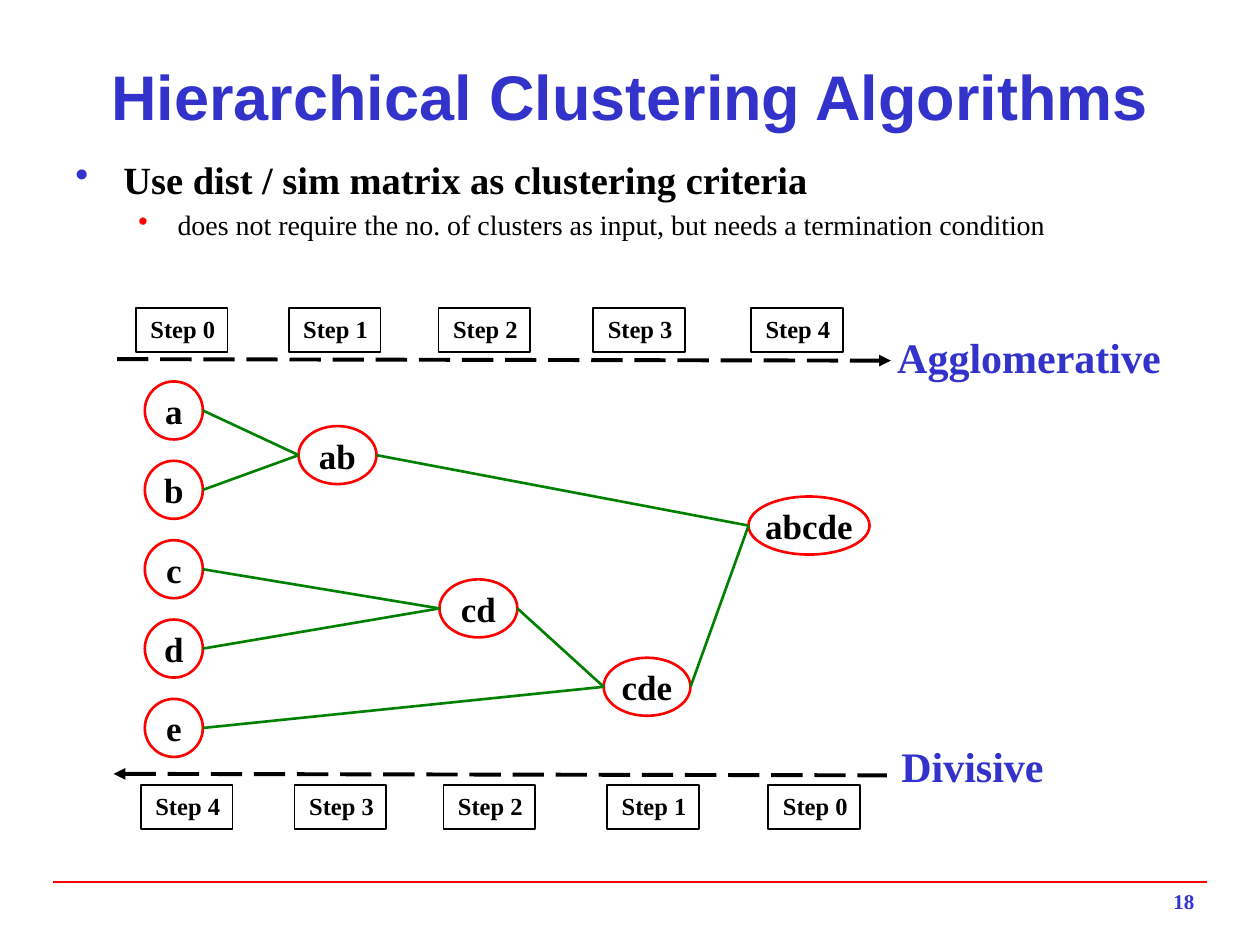
import pptx
import pptx.dml.color
import pptx.enum.dml
import pptx.enum.shapes
import pptx.enum.text
import pptx.oxml
import pptx.oxml.ns
import pptx.util
from lxml import etree

Cm = pptx.util.Cm
Pt = pptx.util.Pt
ALIGN = pptx.enum.text.PP_ALIGN
ANCHOR = pptx.enum.text.MSO_ANCHOR
AUTO_SIZE = pptx.enum.text.MSO_AUTO_SIZE
SHAPE = pptx.enum.shapes.MSO_SHAPE

BLUE, RED, GREEN, BLACK = "3333CC", "FF0000", "008000", "000000"
HEAD_FONT, BODY_FONT = "Arial", "Times New Roman"


def color(value):
    return pptx.dml.color.RGBColor.from_string(value)


def add_xml(parent, tag, **attributes):
    return etree.SubElement(parent, pptx.oxml.ns.qn(tag), attributes)


class SlideBuilder:
    def __init__(self, deck):
        self.page = deck.slides.add_slide(deck.slide_layouts[5])

    def format(self, para, size, ink, align=ALIGN.LEFT, font=BODY_FONT, bold=True):
        para.alignment = align
        for span in para.runs:
            span.font.name = font
            span.font.size = Pt(size)
            span.font.bold = bold
            span.font.color.rgb = color(ink)

    def title(self, text, left, top, width, height):
        box = self.page.shapes.title
        box.left, box.top, box.width, box.height = map(Cm, (left, top, width, height))
        box.text_frame.text = text
        box.text_frame.vertical_anchor = ANCHOR.MIDDLE
        self.format(box.text_frame.paragraphs[0], 36, BLUE, ALIGN.CENTER, HEAD_FONT)

    def text(self, text, left, top, width, height, size, ink, align=ALIGN.RIGHT):
        box = self.page.shapes.add_textbox(*map(Cm, (left, top, width, height)))
        box.text_frame.word_wrap = False
        box.text_frame.text = text
        self.format(box.text_frame.paragraphs[0], size, ink, align)

    def bullets(self, items, left, top, width, height):
        box = self.page.shapes.add_textbox(*map(Cm, (left, top, width, height)))
        frame = box.text_frame
        frame.word_wrap = True
        frame.text = "\n".join(item[0] for item in items)
        for para, (_, level, size, bold, bullet, margin, hanging) in zip(frame.paragraphs, items):
            para.level = level
            para.space_before = Pt(size * 0.2)
            self.format(para, size, BLACK, bold=bold)
            props = para._p.get_or_add_pPr()
            props.set("marL", str(Cm(margin)))
            props.set("indent", str(-Cm(hanging)))
            add_xml(add_xml(props, "a:buClr"), "a:srgbClr", val=bullet)
            add_xml(props, "a:buChar", char="•")

    def shape(self, kind, text, left, top, width, height, size, outline, weight, align, anchor):
        box = self.page.shapes.add_shape(kind, *map(Cm, (left, top, width, height)))
        box.shadow.inherit = False
        box.fill.background()
        box.line.color.rgb = color(outline)
        box.line.width = Pt(weight)
        frame = box.text_frame
        frame.word_wrap = False
        frame.vertical_anchor = anchor
        frame.text = text
        self.format(frame.paragraphs[0], size, BLACK, align)
        return box

    def cluster(self, text, left, top, width):
        return self.shape(SHAPE.OVAL, text, left, top, width, 1.17, 20,
                          RED, 1.5, ALIGN.CENTER, ANCHOR.MIDDLE)

    def step(self, number, left, top):
        box = self.shape(SHAPE.RECTANGLE, f"Step {number}", left, top, 1.85, 0.89, 14,
                         BLACK, 1, ALIGN.RIGHT, ANCHOR.TOP)
        box.text_frame.auto_size = AUTO_SIZE.SHAPE_TO_FIT_TEXT

    def line(self, start, end, ink, weight, arrow=None):
        line = self.page.shapes.add_connector(
            pptx.enum.shapes.MSO_CONNECTOR.STRAIGHT, *start, *end)
        line.line.color.rgb = color(ink)
        line.line.width = Pt(weight)
        if arrow:
            line.line.dash_style = pptx.enum.dml.MSO_LINE.LONG_DASH
            add_xml(line.line._get_or_add_ln(), arrow, type="triangle")
        add_xml(line._element.spPr, "a:effectLst")

    def link(self, child, parent):
        start = (child.left + child.width, child.top + child.height // 2)
        end = (parent.left, parent.top + parent.height // 2)
        self.line(start, end, GREEN, 1.5)


def main():
    deck = pptx.Presentation()
    deck.slide_width, deck.slide_height = Cm(25.4), Cm(19.05)
    slide = SlideBuilder(deck)

    # Footer rule and page number
    slide.line((Cm(1.07), Cm(17.78)), (Cm(24.33), Cm(17.78)), RED, 1)
    slide.text("18", 19.05, 17.78, 5.28, 0.84, 12, BLUE)

    # Title and bullets
    slide.title("Hierarchical Clustering Algorithms", 1.27, 1.07, 22.86, 1.7)
    slide.bullets([
        ("Use dist / sim matrix as clustering criteria", 0, 22, True, BLUE, 0.97, 0.97),
        ("does not require the no. of clusters as input, but needs a termination condition",
         1, 16, False, RED, 2.06, 0.79),
    ], 1.27, 3.02, 22.86, 13.89)

    # Clusters: single items in a column, merged ones to the right
    clusters = {name: slide.cluster(name, 2.92, 7.69 + 1.6 * row, 1.17)
                for row, name in enumerate("abcde")}
    for name, left, top, width in [("ab", 6.02, 8.59, 1.57), ("cd", 8.86, 11.68, 1.57),
                                   ("cde", 12.17, 13.26, 1.75), ("abcde", 15.09, 10.01, 2.44)]:
        clusters[name] = slide.cluster(name, left, top, width)

    # Merge links
    merges = {"ab": ("a", "b"), "cd": ("c", "d"), "cde": ("cd", "e"), "abcde": ("ab", "cde")}
    for parent, children in merges.items():
        for child in children:
            slide.link(clusters[child], clusters[parent])

    # Step scales: agglomerative counts up, divisive counts down
    for number, left in enumerate([2.74, 5.82, 8.84, 11.96, 15.14]):
        slide.step(number, left, 6.21)
    for index, left in enumerate([2.84, 5.94, 8.94, 12.24, 15.49]):
        slide.step(4 - index, left, 15.82)
    slide.line((Cm(2.36), Cm(7.24)), (Cm(17.96), Cm(7.27)), BLACK, 2.25, "a:tailEnd")
    slide.line((Cm(2.29), Cm(15.6)), (Cm(17.88), Cm(15.63)), BLACK, 2.25, "a:headEnd")
    slide.text("Agglomerative", 17.83, 6.55, 5.82, 1.27, 24, BLUE)
    slide.text("Divisive", 17.91, 14.81, 3.38, 1.27, 24, BLUE)

    deck.save("out.pptx")


if __name__ == "__main__":
    main()
